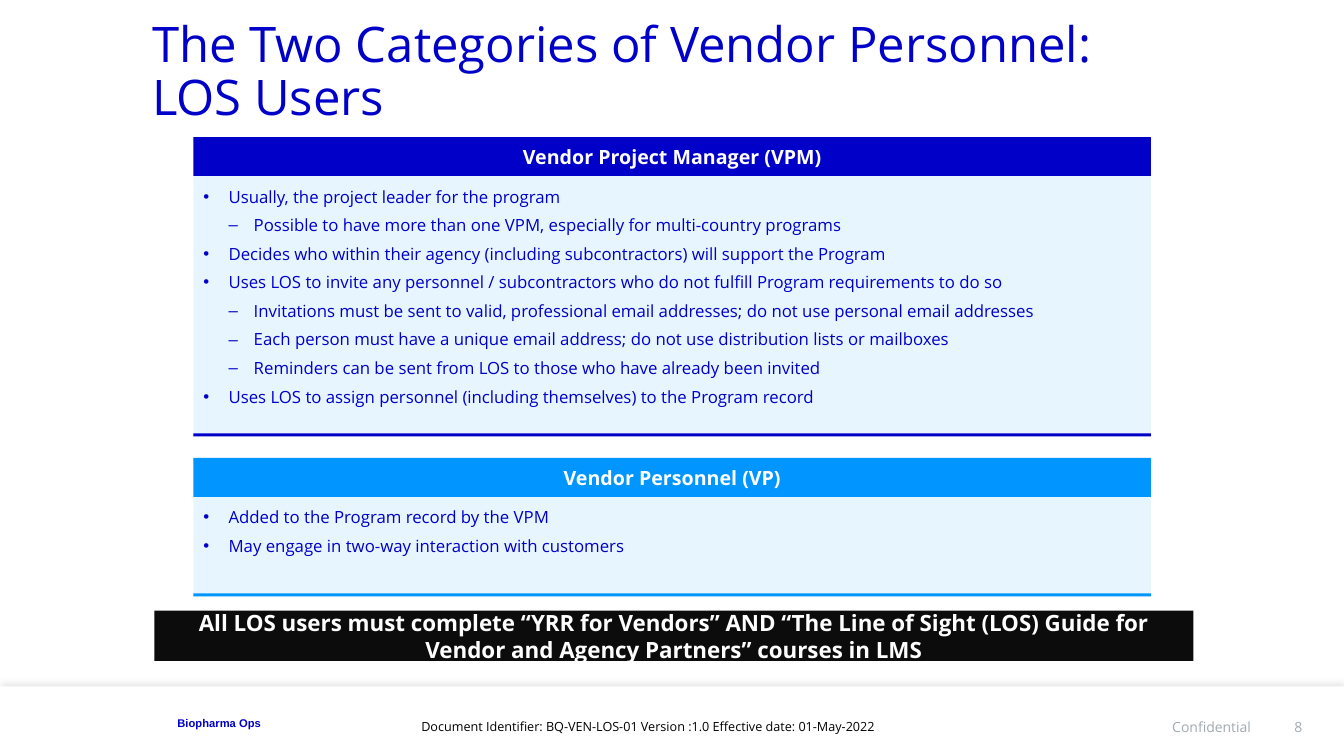
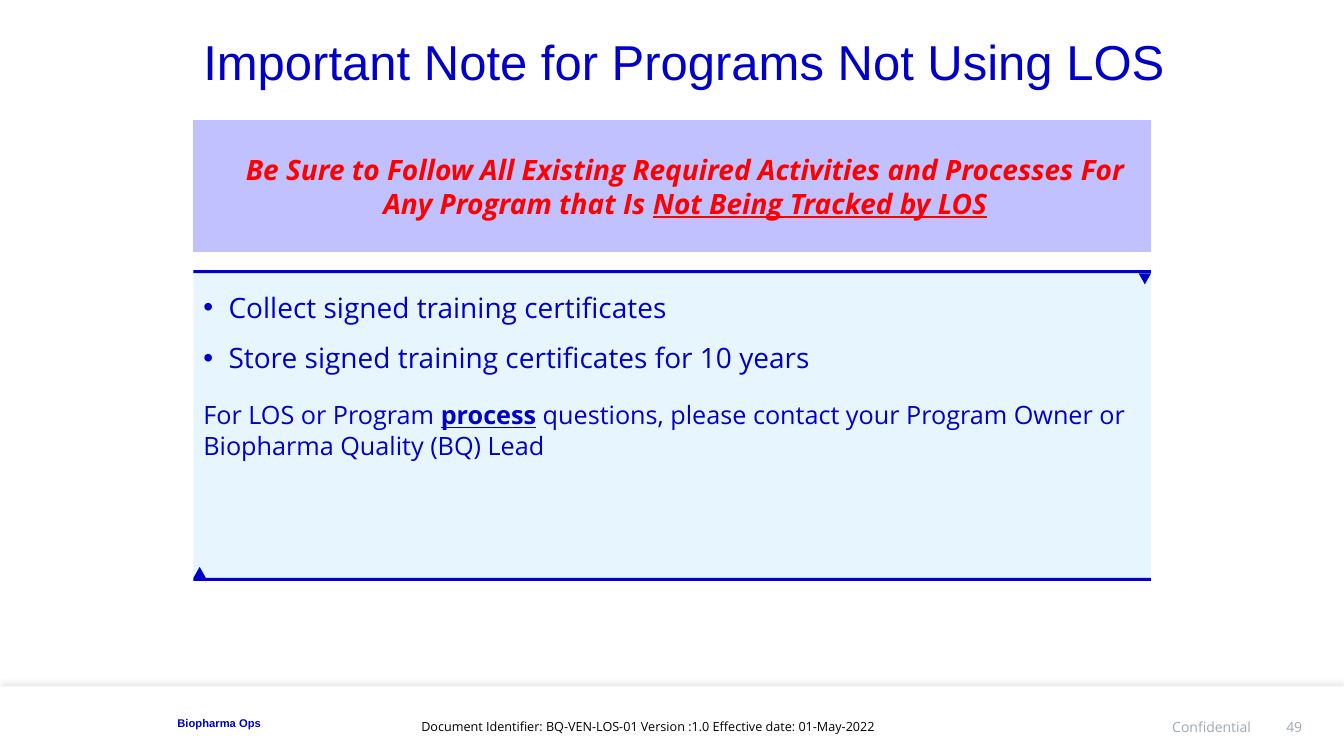
from lxml import etree
from pptx import Presentation
from pptx.dml.color import RGBColor
from pptx.enum import shapes, text
from pptx.oxml import ns
from pptx.util import Pt

COLORS = {
    "navy": "0000C9", "sky": "0095FF", "pale": "E7F5FF", "lilac": "C1C1FF",
    "red": "FF0000", "gray": "A1AAB1", "ink": "0C0C0C", "black": "000000", "white": "FFFFFF",
}
SANS, ARIAL = "Open Sans", "Arial"
RECT, TRIANGLE = shapes.MSO_SHAPE.RECTANGLE, shapes.MSO_SHAPE.ISOSCELES_TRIANGLE
LEFT, CENTER, RIGHT = text.PP_ALIGN.LEFT, text.PP_ALIGN.CENTER, text.PP_ALIGN.RIGHT
TOP, MIDDLE, BOTTOM = text.MSO_ANCHOR.TOP, text.MSO_ANCHOR.MIDDLE, text.MSO_ANCHOR.BOTTOM
PANEL_X, PANEL_W, RULE_H = 138.2, 684, 2.2
INSET = (7.2, 3.6, 7.2, 3.6)

TITLE = {"size": 35, "name": SANS, "color": "navy"}
HEADING = {"size": 14, "name": SANS, "color": "white", "bold": True}
BODY = {"size": 12, "name": SANS, "color": "navy"}
LARGE = BODY | {"size": 20}
CONTACT = BODY | {"size": 18}
WARNING = {"size": 20, "name": SANS, "color": "red", "bold": True, "italic": True}
CALLOUT = HEADING | {"size": 16}
SMALL = {"size": 10, "name": SANS, "color": "gray"}
BRAND = {"size": 8, "name": ARIAL, "color": "navy", "bold": True}
DOCUMENT = {"size": 9, "name": SANS, "color": "black"}

VPM_ITEMS = [
    (0, "Usually, the project leader for the program"),
    (1, "Possible to have more than one VPM, especially for multi-country programs"),
    (0, "Decides who within their agency (including subcontractors) will support the Program"),
    (0, "Uses LOS to invite any personnel / subcontractors who do not fulfill Program requirements to do so"),
    (1, "Invitations must be sent to valid, professional email addresses; do not use personal email addresses"),
    (1, "Each person must have a unique email address; do not use distribution lists or mailboxes"),
    (1, "Reminders can be sent from LOS to those who have already been invited"),
    (0, "Uses LOS to assign personnel (including themselves) to the Program record"),
]
VP_ITEMS = [
    (0, "Added to the Program record by the VPM"),
    (0, "May engage in two-way interaction with customers"),
]


def rgb(name):
    """Return the named colour."""
    return RGBColor.from_string(COLORS[name])


def add_run(p, words, fmt):
    """Add a run and apply its format values."""
    r = p.add_run()
    r.text = words
    for key, value in fmt.items():
        if key == "color":
            r.font.color.rgb = rgb(value)
        else:
            setattr(r.font, key, Pt(value) if key == "size" else value)


def add_bullet(p, level):
    """Give a paragraph a hanging bullet for its level."""
    pPr = p._p.get_or_add_pPr()
    pPr.set("marL", str(Pt(18 * (level + 1))))
    pPr.set("indent", str(Pt(-18)))
    clr = etree.SubElement(pPr, ns.qn("a:buClr"))
    etree.SubElement(clr, ns.qn("a:srgbClr"), val=COLORS["navy"])
    etree.SubElement(pPr, ns.qn("a:buFont"), typeface=ARIAL)
    etree.SubElement(pPr, ns.qn("a:buChar"), char="•–"[level])


def add_paragraph(tf, runs, bullet=None, **fmt):
    """Fill the first empty paragraph or append a new one."""
    p = tf.paragraphs[0]
    if p.runs:
        p = tf.add_paragraph()
    if bullet is not None:
        add_bullet(p, bullet)
    for key, value in fmt.items():
        setattr(p, key, value)
    for words, style in runs:
        add_run(p, words, style)
    return p


def set_frame(sp, anchor=MIDDLE, inset=INSET, wrap=True):
    """Set the text frame of a shape and return it."""
    tf = sp.text_frame
    tf.word_wrap, tf.vertical_anchor = wrap, anchor
    for side, value in zip(("left", "top", "right", "bottom"), inset):
        setattr(tf, f"margin_{side}", Pt(value))
    return tf


def add_block(s, x, y, w, h, fill, kind=RECT):
    """Add a plain filled shape."""
    sp = s.shapes.add_shape(kind, Pt(x), Pt(y), Pt(w), Pt(h))
    sp.shadow.inherit = False
    sp.fill.solid()
    sp.fill.fore_color.rgb = rgb(fill)
    sp.line.fill.background()
    return sp


def add_label(s, x, y, w, h, words, style, align=LEFT, spacing=0.9, **frame):
    """Add a text box, splitting the words at line ends."""
    tf = set_frame(s.shapes.add_textbox(Pt(x), Pt(y), Pt(w), Pt(h)), **frame)
    first, *rest = words.split("\n")
    p = add_paragraph(tf, [(first, style)], alignment=align, line_spacing=spacing)
    for line in rest:
        p.add_line_break()
        add_run(p, line, style)


def add_bar(s, x, y, w, h, fill, words, style):
    """Add a filled bar with centred text."""
    sp = add_block(s, x, y, w, h, fill)
    add_paragraph(set_frame(sp), [(words, style)], alignment=CENTER)


def add_footer(s, number, y=490.2, h=50.2):
    """Add the shadowed footer band and its labels."""
    sp = add_block(s, 0, y, 960, h, "white")
    effects = sp._element.spPr.find(ns.qn("a:effectLst"))
    shadow = etree.SubElement(effects, ns.qn("a:outerShdw"), blurRad=str(Pt(4)),
                              dist=str(Pt(3)), dir="16200000", rotWithShape="0")
    clr = etree.SubElement(shadow, ns.qn("a:srgbClr"), val=COLORS["black"])
    etree.SubElement(clr, ns.qn("a:alpha"), val="10000")
    for x, dy, w, words, style, align in (
        (908.6, 8.8, 21.6, str(number), SMALL, RIGHT),
        (472.3, 8.8, 421.2, "Confidential", SMALL, RIGHT),
        (126.7, 4.4, 326.2, "Biopharma Ops", BRAND, LEFT),
    ):
        add_label(s, x, y + dy, w, 26.6, words, style, align, anchor=BOTTOM, inset=(0,) * 4)
    add_label(s, 293.8, y + 19.6, 344.2, 18,
              "Document Identifier: BQ-VEN-LOS-01 Version :1.0 Effective date: 01-May-2022",
              DOCUMENT, spacing=1.0, anchor=TOP, wrap=False)


def add_slide(prs, number, title, x, y, w, **fmt):
    """Add a slide with its footer and title."""
    s = prs.slides.add_slide(prs.slide_layouts[6])
    add_footer(s, number)
    add_label(s, x, y, w, 104.4, title, TITLE | fmt)
    return s


def add_panel(s, x, y, w, h, fill, heading, items, head_h=28):
    """Add a headed list panel closed by a rule."""
    add_bar(s, x, y, w, head_h, fill, heading, HEADING)
    sp = add_block(s, x, y + head_h, w, h - head_h, "pale")
    tf = set_frame(sp, TOP, (7.2, 7.2, 7.2, 3.6))
    for level, words in items:
        add_paragraph(tf, [(words, BODY)], level, alignment=LEFT, space_after=Pt(6))
    add_block(s, x, y + h - RULE_H, w, RULE_H, fill)


def add_warning(s, x, y, w, h):
    """Add the warning banner."""
    sp = add_block(s, x, y, w, h, "lilac")
    sp.line.color.rgb = rgb("lilac")
    sp.line.width = Pt(0.75)
    p = add_paragraph(set_frame(sp), [
        ("Be Sure to Follow All Existing Required Activities and Processes For Any Program that Is ", WARNING),
        ("Not Being Tracked by LOS", WARNING | {"underline": True}),
    ], alignment=CENTER, space_after=Pt(6))
    p._p.get_or_add_pPr().set("marL", str(Pt(18.7)))


def add_notes_box(s, x, y, w, h, tri_w=8.9, tri_h=7.9):
    """Add the ruled box of instructions with corner markers."""
    tf = set_frame(add_block(s, x, y, w, h, "pale"), TOP, (7.2, 14.4, 7.2, 3.6))
    gaps = {"alignment": LEFT, "space_after": Pt(6)}
    add_paragraph(tf, [("Collect signed training certificates", LARGE)], 0, **gaps)
    add_paragraph(tf, [("Store signed training certificates for 10 years", LARGE)], 0,
                  space_before=Pt(6), **gaps)
    add_paragraph(tf, [
        ("For LOS or Program ", CONTACT),
        ("process", CONTACT | {"bold": True, "underline": True}),
        (" questions, please contact your Program Owner or Biopharma Quality (BQ) Lead", CONTACT),
    ], space_before=Pt(12), **gaps)
    for rule_y in (y, y + h - RULE_H):
        add_block(s, x, rule_y, w, RULE_H, "navy")
    add_block(s, x, y + h - RULE_H - tri_h, tri_w, tri_h, "navy", TRIANGLE)
    sp = add_block(s, x + w - tri_w, y + RULE_H, tri_w, tri_h, "navy", TRIANGLE)
    sp.rotation = 180


def build_categories(prs):
    """Build the slide on the two user categories."""
    s = add_slide(prs, 8, "The Two Categories of Vendor Personnel: \nLOS Users", 101.5, 0, 843)
    add_panel(s, PANEL_X, 97.9, PANEL_W, 213.9, "navy", "Vendor Project Manager (VPM)", VPM_ITEMS)
    add_panel(s, PANEL_X, 327, PANEL_W, 99, "sky", "Vendor Personnel (VP)", VP_ITEMS)
    add_bar(s, 110.2, 436.2, 742.2, 36, "ink",
            "All LOS users must complete “YRR for Vendors” AND “The Line of Sight (LOS) Guide for "
            "Vendor and Agency Partners” courses in LMS", CALLOUT)


def build_note(prs):
    """Build the slide on programs outside LOS."""
    s = add_slide(prs, 49, "Important Note for Programs Not Using LOS", PANEL_X, -5.8, 717, name=ARIAL)
    add_notes_box(s, PANEL_X, 193, PANEL_W, 222)
    add_warning(s, PANEL_X, 85.8, PANEL_W, 94.2)


def main():
    """Build and save the presentation."""
    prs = Presentation()
    prs.slide_width, prs.slide_height = Pt(960), Pt(540)
    build_categories(prs)
    build_note(prs)
    prs.save("out.pptx")


if __name__ == "__main__":
    main()
